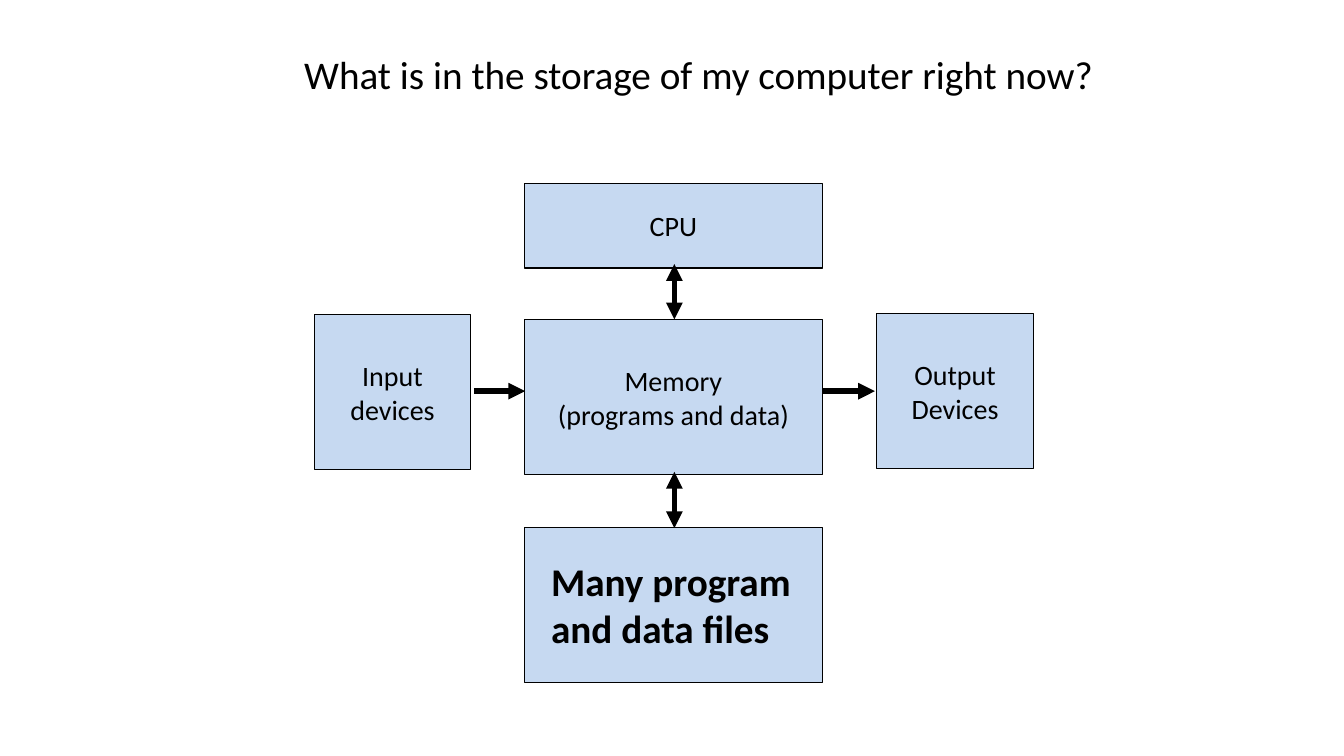
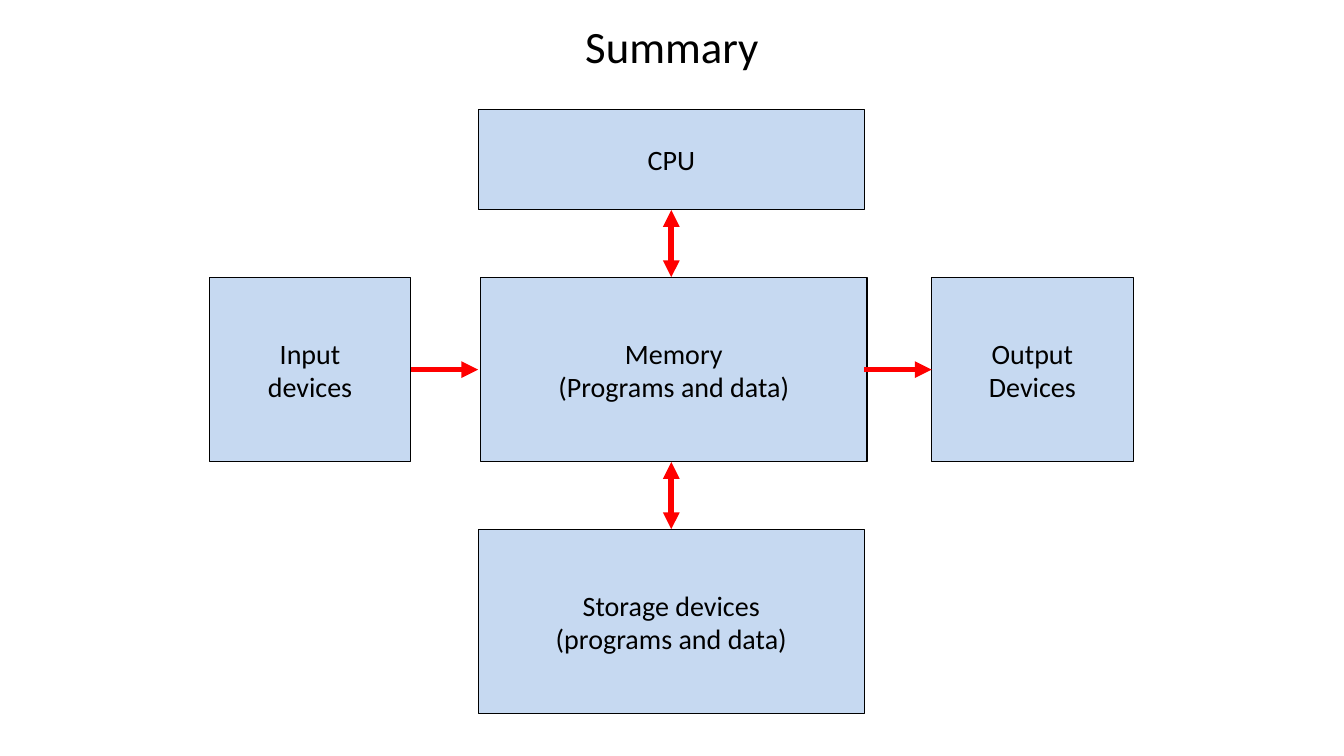
"""Build two slides that show the parts of a computer as a block diagram."""
from pptx import Presentation
from pptx.dml.color import RGBColor
from pptx.enum import shapes, text
from pptx.oxml import ns
from pptx.util import Pt
from lxml import etree

BLACK = RGBColor(0x00, 0x00, 0x00)
RED = RGBColor(0xFF, 0x00, 0x00)
PALE_BLUE = RGBColor(0xC6, 0xD9, 0xF1)
FONT = "Calibri"
LEFT, CENTER = text.PP_ALIGN.LEFT, text.PP_ALIGN.CENTER
MIDDLE, TOP = text.MSO_ANCHOR.MIDDLE, text.MSO_ANCHOR.TOP


def write(shape, content, size=20, bold=False, align=CENTER, anchor=MIDDLE, wrap=True):
    """Fill a shape with formatted text, one paragraph per line."""
    tf = shape.text_frame
    tf.text = content
    tf.word_wrap = wrap
    tf.vertical_anchor = anchor
    for p in tf.paragraphs:
        p.alignment = align
        p.font.name = FONT
        p.font.size = Pt(size)
        p.font.bold = bold
        p.font.color.rgb = BLACK


def add_text(s, bounds, content, **style):
    """Add a text box at the given left, top, width and height."""
    write(s.shapes.add_textbox(*map(Pt, bounds)), content, **style)


def add_block(s, bounds, label):
    """Add a pale blue block with an optional centred label."""
    sp = s.shapes.add_shape(shapes.MSO_SHAPE.RECTANGLE, *map(Pt, bounds))
    sp.shadow.inherit = False
    sp.fill.solid()
    sp.fill.fore_color.rgb = PALE_BLUE
    sp.line.color.rgb = BLACK
    sp.line.width = Pt(0.75)
    if label:
        write(sp, label, wrap=False)


def add_arrow(s, ends, color, both=False):
    """Add a thick arrow, with a head at both ends on request."""
    cn = s.shapes.add_connector(shapes.MSO_CONNECTOR.STRAIGHT, *map(Pt, ends))
    cn.line.color.rgb = color
    cn.line.width = Pt(4)
    ln = cn.line._get_or_add_ln()
    for tag in ("a:headEnd", "a:tailEnd") if both else ("a:tailEnd",):
        etree.SubElement(ln, ns.qn(tag), type="triangle")
    etree.SubElement(cn._element.spPr, ns.qn("a:effectLst"))


def add_diagram(s, blocks, across, down, color):
    """Add the blocks, the one-way arrows across and the two-way arrows down."""
    for label, bounds in blocks:
        add_block(s, bounds, label)
    y, spans = across
    for start, end in spans:
        add_arrow(s, (start, y, end, y), color)
    x, spans = down
    for start, end in spans:
        add_arrow(s, (x, start, x, end), color, both=True)


def add_storage_slide(prs):
    """Add the slide on what the storage holds."""
    s = prs.slides.add_slide(prs.slide_layouts[6])
    x, w, h, side = 374.4, 213.2, 110.9, 111.6
    blocks = [
        ("Memory\n(programs and data)", (x, 228.2, w, h)),
        ("CPU", (x, 131, w, 60.5)),
        ("", (x, 376.6, w, h)),
        ("Input\ndevices", (224.6, 224.6, side, h)),
        ("Output\nDevices", (626.4, 223.9, side, h)),
    ]
    across = 279.4, [(338.4, 375.1), (588.2, 625)]
    down = 481.7, [(188.6, 228.2), (337, 377.3)]
    add_diagram(s, blocks, across, down, BLACK)
    add_text(s, (386.6, 394.6, 189.4, 74.9), "Many program and data files",
             size=28, bold=True, align=LEFT, anchor=TOP)
    add_text(s, (210.2, 15.1, 663, 75.6),
             "What is in the storage of my computer right now?", size=28, align=LEFT)


def add_summary_slide(prs):
    """Add the slide that sums up the whole computer."""
    s = prs.slides.add_slide(prs.slide_layouts[6])
    x, w, h, side, gap = 341.5, 276, 132, 144, 48
    cpu_top, cpu_height = 78, 72
    memory_top = cpu_top + cpu_height + gap
    storage_top = memory_top + h + gap
    input_left = x - gap - side
    output_left = x + w + gap
    blocks = [
        ("Memory\n(Programs and data)", (x + 1.8, memory_top, w, h)),
        ("CPU", (x, cpu_top, w, cpu_height)),
        ("Storage devices\n(programs and data)", (x, storage_top, w, h)),
        ("Input\ndevices", (input_left, memory_top, side, h)),
        ("Output\nDevices", (output_left, memory_top, side, h)),
    ]
    across = memory_top + h / 2, [(x - gap, x), (x + w, output_left)]
    down = x + w / 2, [(memory_top - gap, memory_top), (storage_top - gap, storage_top)]
    add_diagram(s, blocks, across, down, RED)
    add_text(s, (120, 0, 720, 65.5), "Summary", size=32)


def main():
    """Build and save the presentation."""
    prs = Presentation()
    prs.slide_width, prs.slide_height = Pt(960), Pt(540)
    add_storage_slide(prs)
    add_summary_slide(prs)
    prs.save("out.pptx")


if __name__ == "__main__":
    main()
